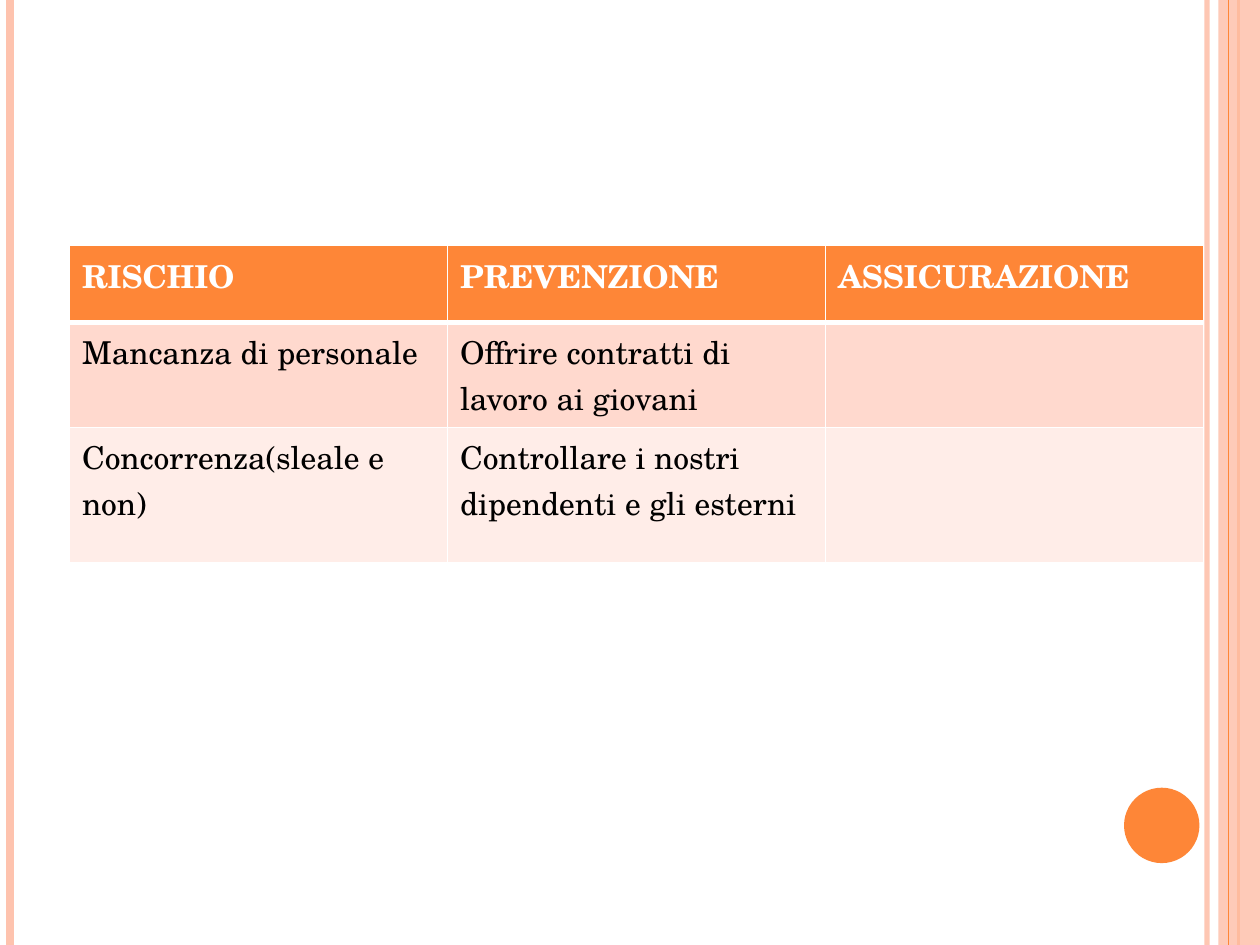
from lxml import etree
from pptx import Presentation
from pptx.dml.color import RGBColor
from pptx.enum.shapes import MSO_CONNECTOR, MSO_SHAPE
from pptx.oxml.ns import qn
from pptx.util import Cm, Pt

STRAIGHT = MSO_CONNECTOR.STRAIGHT
RECTANGLE, OVAL = MSO_SHAPE.RECTANGLE, MSO_SHAPE.OVAL

# Content
HEADER = ["RISCHIO", "PREVENZIONE", "ASSICURAZIONE"]
RISKS = [
    ["Mancanza di personale", "Offrire contratti di lavoro ai giovani", ""],
    ["Concorrenza(sleale e non)", "Controllare i nostri dipendenti e gli esterni", ""],
]

# Style and measures (cm, points)
COLORS = {
    "orange": "FE8637", "peach": "FEC3AE", "white": "FFFFFF",
    "black": "000000", "band_dark": "FFD9CE", "band_light": "FFEDE8",
}
FONT = "TeX Gyre Schola"
SLIDE_W, SLIDE_H = 25.4, 19.05
TABLE_LEFT, TABLE_TOP, COLUMN_W = 1.4, 4.95, 7.62
ROW_HEIGHTS = [1.55, 1.88, 2.72]
BAND_LEFT = 24.56
DOT_LEFT, DOT_TOP, DOT_SIZE = 22.66, 15.88, 1.52


def rgb(name):
    return RGBColor.from_string(COLORS[name])


def set_alpha(element, percent):
    color = next(element.iter(qn("a:srgbClr")))
    etree.SubElement(color, qn("a:alpha"), val=str(percent * 1000))


def add_stripe(x, color, width, alpha=100):
    stripe = slide.shapes.add_connector(STRAIGHT, Cm(x), 0, Cm(x), Cm(SLIDE_H))
    stripe.line.color.rgb = rgb(color)
    stripe.line.width = Pt(width)
    properties = stripe._element.spPr
    if alpha < 100:
        set_alpha(properties, alpha)
    etree.SubElement(properties, qn("a:effectLst"))


def add_ornament(kind, left, top, width, height, color, alpha=100):
    ornament = slide.shapes.add_shape(kind, Cm(left), Cm(top), Cm(width), Cm(height))
    ornament.shadow.inherit = False
    ornament.fill.solid()
    ornament.fill.fore_color.rgb = rgb(color)
    ornament.line.fill.background()
    if alpha < 100:
        set_alpha(ornament._element.spPr, alpha)


def write(frame, text, color="black", bold=False, size=18):
    paragraph = frame.paragraphs[0]
    paragraph.text = text
    font = paragraph.font
    font.name, font.size, font.bold = FONT, Pt(size), bold
    font.color.rgb = rgb(color)


def set_borders(cell, widths):
    properties = cell._tc.get_or_add_tcPr()
    for position, (side, width) in enumerate(widths.items()):
        border = etree.Element(qn(f"a:ln{side}"), w=str(Pt(width)))
        fill = etree.SubElement(border, qn("a:solidFill"))
        etree.SubElement(fill, qn("a:srgbClr"), val=COLORS["white"])
        properties.insert(position, border)


prs = Presentation()
prs.slide_width, prs.slide_height = Cm(SLIDE_W), Cm(SLIDE_H)
slide = prs.slides.add_slide(prs.slide_layouts[6])

# Side stripes, band and dot
add_stripe(24.33, "peach", 3, alpha=93)
add_stripe(0.2, "peach", 4.5)
add_stripe(24.97, "orange", 1.5)
add_ornament(RECTANGLE, BAND_LEFT, 0, SLIDE_W - BAND_LEFT, SLIDE_H, "peach", alpha=87)
add_stripe(24.77, "orange", 0.75)
add_ornament(OVAL, DOT_LEFT, DOT_TOP, DOT_SIZE, DOT_SIZE, "orange")

# Risk table
rows = [HEADER] + RISKS
risk_table = slide.shapes.add_table(
    len(rows), len(HEADER), Cm(TABLE_LEFT), Cm(TABLE_TOP),
    Cm(COLUMN_W * len(HEADER)), Cm(sum(ROW_HEIGHTS))).table
for column in risk_table.columns:
    column.width = Cm(COLUMN_W)
for r, (texts, height) in enumerate(zip(rows, ROW_HEIGHTS)):
    risk_table.rows[r].height = Cm(height)
    is_header = r == 0
    background = "orange" if is_header else "band_dark" if r % 2 else "band_light"
    for c, text in enumerate(texts):
        cell = risk_table.cell(r, c)
        cell.fill.solid()
        cell.fill.fore_color.rgb = rgb(background)
        write(cell.text_frame, text, color="white" if is_header else "black", bold=is_header)
        set_borders(cell, {"L": 1, "R": 1, "T": 3 if r == 1 else 1, "B": 3 if is_header else 1})

prs.save("out.pptx")
